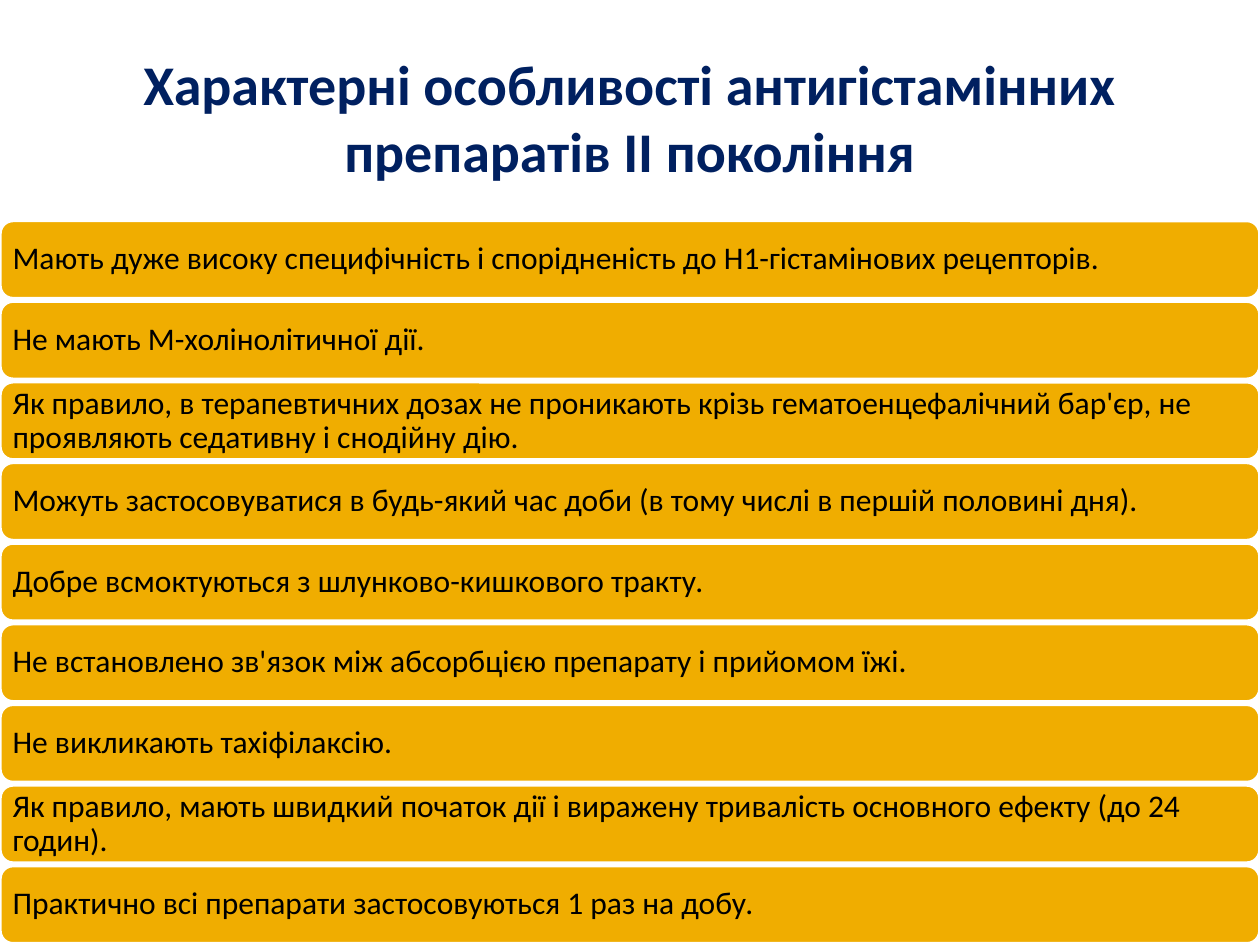
from pptx import Presentation
from pptx.dml.color import RGBColor
from pptx.enum.shapes import MSO_SHAPE
from pptx.enum.text import MSO_ANCHOR, PP_ALIGN
from pptx.util import Pt

TITLE = "Характерні особливості антигістамінних препаратів II покоління"
FEATURES = [
    "Мають дуже високу специфічність і спорідненість до Н1-гістамінових рецепторів.",
    "Не мають М-холінолітичної дії.",
    "Як правило, в терапевтичних дозах не проникають крізь гематоенцефалічний бар'єр, не проявляють седативну і снодійну дію.",
    "Можуть застосовуватися в будь-який час доби (в тому числі в першій половині дня).",
    "Добре всмоктуються з шлунково-кишкового тракту.",
    "Не встановлено зв'язок між абсорбцією препарату і прийомом їжі.",
    "Не викликають тахіфілаксію.",
    "Як правило, мають швидкий початок дії і виражену тривалість основного ефекту (до 24 годин).",
    "Практично всі препарати застосовуються 1 раз на добу.",
]

NAVY = RGBColor(0x00, 0x20, 0x60)
AMBER = RGBColor(0xF0, 0xAD, 0x00)
WHITE = RGBColor(0xFF, 0xFF, 0xFF)
BLACK = RGBColor(0x00, 0x00, 0x00)

PX = 9144
WIDTH, HEIGHT = 1000, 750
BAR_TOP, BAR_HEIGHT, BAR_GAP = 175, 62, 2
INSET = 7


def px(*lengths):
    return [n * PX for n in lengths]


def set_attrs(obj, values):
    for name, value in values.items():
        setattr(obj, name, value)


def write(sp, text, size, color, bold, align):
    tf = sp.text_frame
    tf.text = text
    set_attrs(tf, {"word_wrap": True, "vertical_anchor": MSO_ANCHOR.MIDDLE})
    p = tf.paragraphs[0]
    p.alignment = align
    r = p.runs[0]
    set_attrs(r.font, {"name": "Calibri", "size": Pt(size), "bold": bold})
    r.font.color.rgb = color
    return tf


def add_bar(s, row, text):
    top = BAR_TOP + row * (BAR_HEIGHT + BAR_GAP)
    sp = s.shapes.add_shape(MSO_SHAPE.ROUNDED_RECTANGLE, *px(0, top, WIDTH, BAR_HEIGHT))
    sp.shadow.inherit = False
    sp.fill.solid()
    sp.fill.fore_color.rgb = AMBER
    sp.line.color.rgb = WHITE
    sp.line.width = Pt(2)
    tf = write(sp, text, 18, BLACK, False, PP_ALIGN.LEFT)
    sides = ("left", "top", "right", "bottom")
    set_attrs(tf, {f"margin_{side}": INSET * PX for side in sides})
    tf.paragraphs[0].line_spacing = 0.9


def main():
    prs = Presentation()
    prs.slide_width, prs.slide_height = px(WIDTH, HEIGHT)
    s = prs.slides.add_slide(prs.slide_layouts[5])
    title = s.shapes.title
    set_attrs(title, dict(zip(("left", "top", "width", "height"), px(50, 30, 900, 125))))
    write(title, TITLE, 32, NAVY, True, PP_ALIGN.CENTER)
    for row, text in enumerate(FEATURES):
        add_bar(s, row, text)
    prs.save("out.pptx")


if __name__ == "__main__":
    main()
